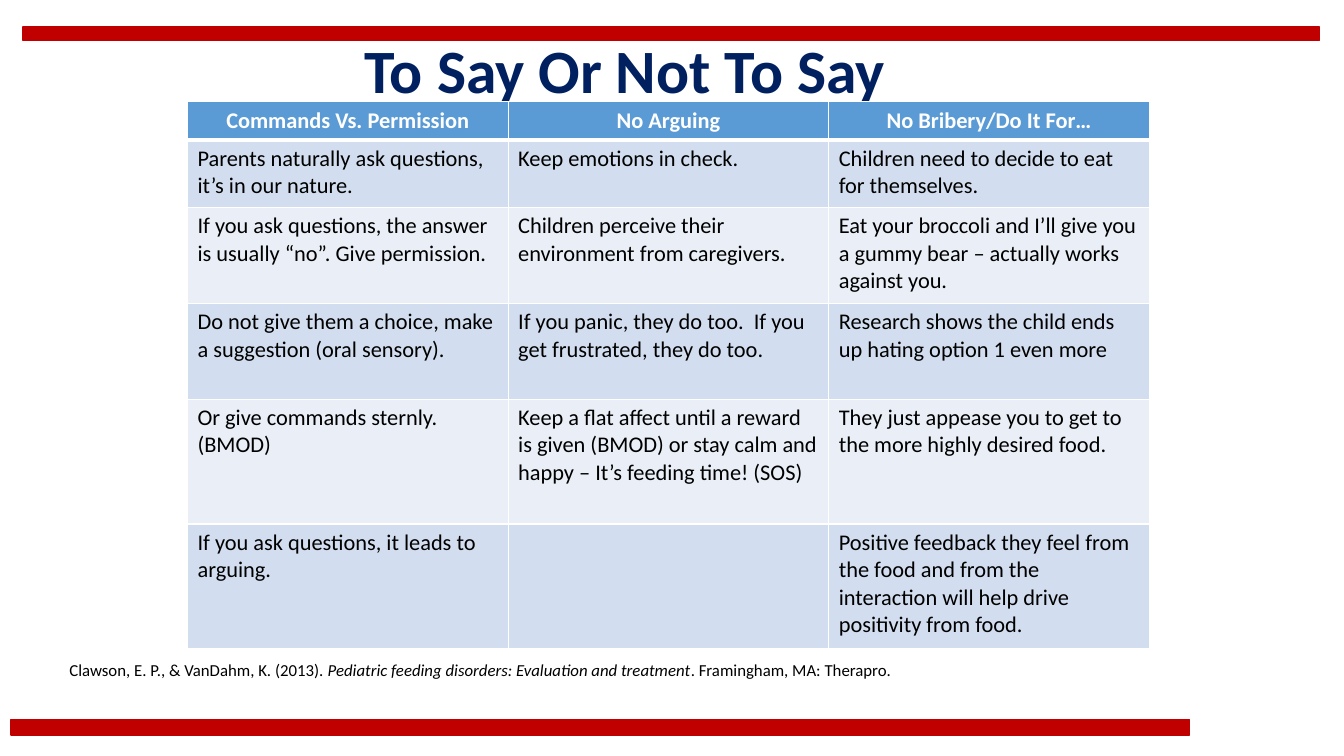
from dataclasses import dataclass

from lxml.etree import SubElement
from pptx import Presentation
from pptx.dml.color import RGBColor
from pptx.enum.shapes import MSO_SHAPE
from pptx.enum.text import MSO_ANCHOR, PP_ALIGN
from pptx.oxml.ns import qn
from pptx.util import Emu, Pt

EMU_PER_PX = 9144  # 100 px to the inch


@dataclass(frozen=True)
class Theme:
    font: str = "Calibri"
    bar: str = "C00000"
    title: str = "002060"
    text: str = "000000"
    white: str = "FFFFFF"
    header: str = "5B9BD5"
    bands: tuple[str, str] = ("D2DEEF", "EAEFF7")
    title_size: int = 44
    table_size: int = 16
    source_size: int = 12


@dataclass(frozen=True)
class Box:
    left: int
    top: int
    width: int
    height: int

    def emu(self) -> tuple[Emu, ...]:
        return tuple(px(v) for v in (self.left, self.top, self.width, self.height))


@dataclass(frozen=True)
class TableRow:
    height: int
    cells: tuple[str, str, str]


THEME = Theme()
BARS = (Box(11, 714, 1169, 15), Box(23, 27, 1286, 13))
TITLE_BOX = Box(45, 0, 1150, 145)
SOURCE_BOX = Box(59, 650, 1107, 61)
TABLE_LEFT, TABLE_TOP, COLUMN_WIDTH = 186, 101, 318

ROWS = (
    TableRow(38, ("Commands Vs. Permission", "No Arguing", "No Bribery/Do It For…")),
    TableRow(67, ("Parents naturally ask questions, it’s in our nature.",
                  "Keep emotions in check.",
                  "Children need to decide to eat for themselves.")),
    TableRow(95, ("If you ask questions, the answer is usually “no”. Give permission.",
                  "Children perceive their environment from caregivers.",
                  "Eat your broccoli and I’ll give you a gummy bear – actually works against you.")),
    TableRow(95, ("Do not give them a choice, make a suggestion (oral sensory).",
                  "If you panic, they do too.  If you get frustrated, they do too.",
                  "Research shows the child ends up hating option 1 even more")),
    TableRow(124, ("Or give commands sternly. (BMOD)",
                   "Keep a flat affect until a reward is given (BMOD) or stay calm and happy"
                   " – It’s feeding time! (SOS)",
                   "They just appease you to get to the more highly desired food.")),
    TableRow(124, ("If you ask questions, it leads to arguing.",
                   "",
                   "Positive feedback they feel from the food and from the interaction will help"
                   " drive positivity from food.")),
)


def px(value: int) -> Emu:
    return Emu(value * EMU_PER_PX)


def rgb(color: str) -> RGBColor:
    return RGBColor.from_string(color)


def style_font(font, size: int, color: str, bold: bool = False) -> None:
    font.name = THEME.font
    font.size = Pt(size)
    font.bold = bold
    font.color.rgb = rgb(color)


def add_bar(slide, box: Box) -> None:
    sp = slide.shapes.add_shape(MSO_SHAPE.RECTANGLE, *box.emu())
    sp.shadow.inherit = False
    sp.fill.solid()
    sp.fill.fore_color.rgb = rgb(THEME.bar)
    sp.line.color.rgb = rgb(THEME.bar)
    sp.line.width = Pt(1)


def add_title(slide) -> None:
    tf = slide.shapes.add_textbox(*TITLE_BOX.emu()).text_frame
    tf.word_wrap = True
    tf.vertical_anchor = MSO_ANCHOR.MIDDLE
    tf.margin_top = tf.margin_bottom = px(10)
    tf.text = "To Say Or Not To Say"
    p = tf.paragraphs[0]
    p.alignment = PP_ALIGN.CENTER
    p.line_spacing = 0.9
    style_font(p.runs[0].font, THEME.title_size, THEME.title, bold=True)


def add_borders(cell, top: int, bottom: int) -> None:
    """Draw white cell borders; top and bottom widths are in points."""
    tc_pr = cell._tc.get_or_add_tcPr()
    for side, width in (("L", 1), ("R", 1), ("T", top), ("B", bottom)):
        ln = SubElement(tc_pr, qn(f"a:ln{side}"), w=str(Pt(width)))
        fill = SubElement(ln, qn("a:solidFill"))
        SubElement(fill, qn("a:srgbClr"), val=THEME.white)


def fill_cell(cell, text: str, row: int) -> None:
    is_header = row == 0
    add_borders(cell, top=3 if row == 1 else 1, bottom=3 if is_header else 1)
    cell.fill.solid()
    cell.fill.fore_color.rgb = rgb(THEME.header if is_header else THEME.bands[(row - 1) % 2])
    cell.text = text
    p = cell.text_frame.paragraphs[0]
    p.alignment = PP_ALIGN.CENTER if is_header else PP_ALIGN.LEFT
    style_font(p.font, THEME.table_size, THEME.white if is_header else THEME.text, is_header)
    for r in p.runs:
        style_font(r.font, THEME.table_size, THEME.white if is_header else THEME.text, is_header)


def add_advice_table(slide) -> None:
    columns = len(ROWS[0].cells)
    box = Box(TABLE_LEFT, TABLE_TOP, columns * COLUMN_WIDTH, sum(row.height for row in ROWS))
    table = slide.shapes.add_table(len(ROWS), columns, *box.emu()).table
    for column in table.columns:
        column.width = px(COLUMN_WIDTH)
    for i, row in enumerate(ROWS):
        table.rows[i].height = px(row.height)
        for j, text in enumerate(row.cells):
            fill_cell(table.cell(i, j), text, i)


def add_source(slide) -> None:
    tf = slide.shapes.add_textbox(*SOURCE_BOX.emu()).text_frame
    tf.word_wrap = True
    p = tf.paragraphs[0]
    for text, italic in (
        ("Clawson, E. P., & VanDahm, K. (2013). ", False),
        ("Pediatric feeding disorders: Evaluation and treatment", True),
        (". Framingham, MA: Therapro.", False),
    ):
        r = p.add_run()
        r.text = text
        style_font(r.font, THEME.source_size, THEME.text)
        r.font.italic = italic


def main() -> None:
    prs = Presentation()
    prs.slide_width, prs.slide_height = px(1333), px(750)
    slide = prs.slides.add_slide(prs.slide_layouts[6])
    for bar in BARS:
        add_bar(slide, bar)
    add_title(slide)
    add_advice_table(slide)
    add_source(slide)
    prs.save("out.pptx")


if __name__ == "__main__":
    main()
